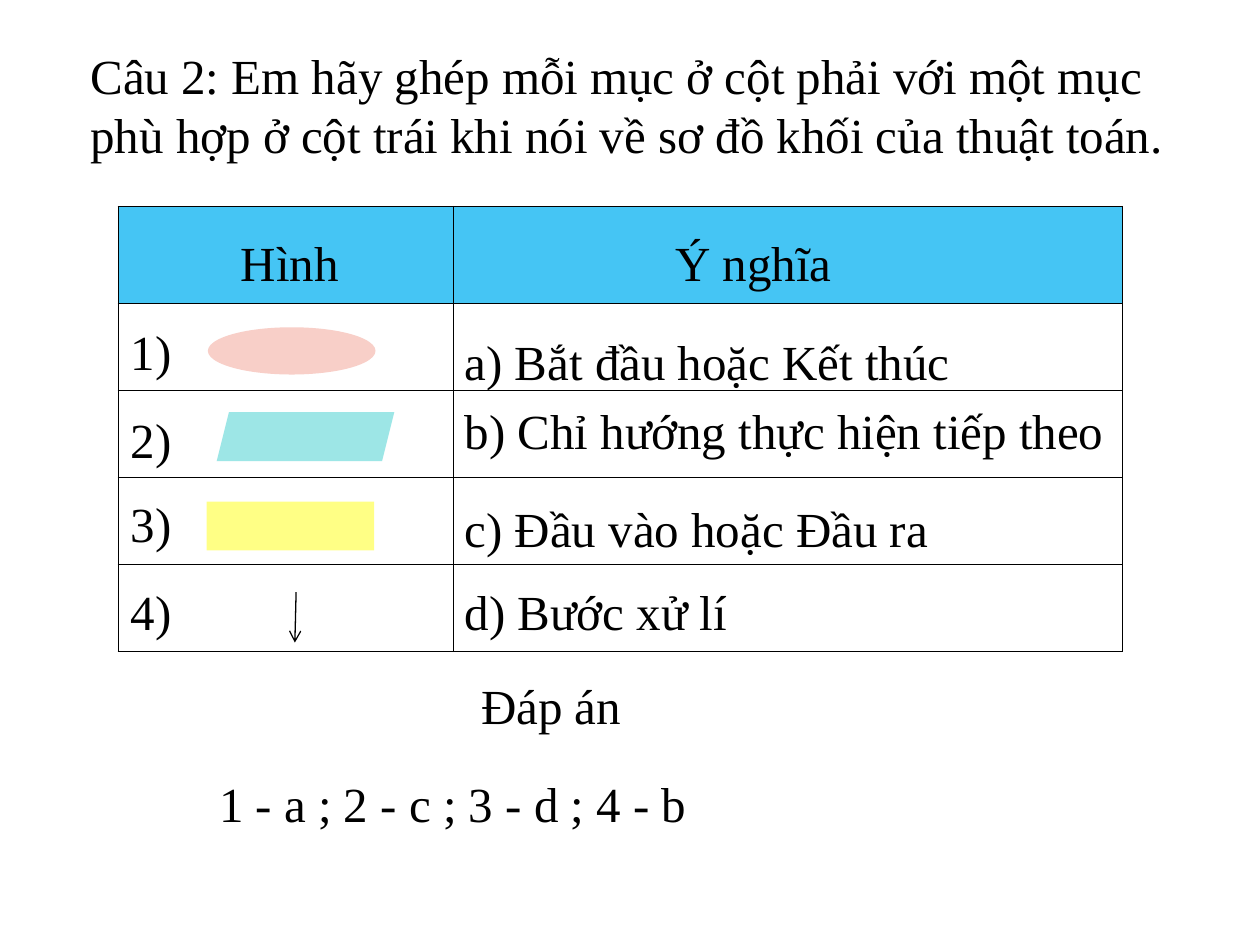
from dataclasses import dataclass

from lxml.etree import SubElement as Sub
from pptx import Presentation
from pptx.dml.color import RGBColor as Rgb
from pptx.enum.shapes import MSO_CONNECTOR as Conn, MSO_SHAPE as Kind
from pptx.enum.text import MSO_AUTO_SIZE as Auto, PP_ALIGN as Align
from pptx.oxml.ns import qn
from pptx.util import Pt


@dataclass(frozen=True)
class Theme:
    font: str = "Times New Roman"
    size: float = 28
    ink: str = "000000"
    head: str = "00B0F0"
    teal: str = "33CCCC"
    yellow: str = "FFFF00"
    pink: str = "F8CFC8"
    border: float = 1
    thin: float = 0.75


@dataclass(frozen=True)
class Label:
    text: str
    left: float
    top: float
    width: float
    height: float = 41
    align: Align = Align.LEFT


@dataclass(frozen=True)
class Symbol:
    kind: Kind
    left: float
    top: float
    width: float
    height: float
    color: str
    alpha: int = 100


THEME = Theme()
LEFT, TOP = 67.7, 118.1
COLS = (191.5, 382.3)
ROWS = (55.4,) + (49.7,) * 4
ANSWER = 258.5  # left edge of the meanings

# Each row: number, top of number, meaning, top of meaning, width
PAIRS = (
    ("1)", 180, "a) Bắt đầu hoặc Kết thúc", 185.8, 360),
    ("2)", 230.4, "b) Chỉ hướng thực hiện tiếp theo", 225.4, 388),
    ("3)", 278.6, "c) Đầu vào hoặc Đầu ra", 281.5, 376.6),
    ("4)", 329, "d) Bước xử lí", 329, 371.5),
)
LABELS = (
    Label("Câu 2: Em hãy ghép mỗi mục ở cột phải với một mục phù hợp "
          "ở cột trái khi nói về sơ đồ khối của thuật toán.",
          44.6, 22.3, 630, 75),
    Label("Hình", 95.8, 129.6, 139.7, align=Align.CENTER),
    Label("Ý nghĩa", 360.7, 129.6, 139.7, align=Align.CENTER),
    Label("Đáp án", 208.1, 382.3, 213.8, align=Align.CENTER),
    Label("1 - a ; 2 - c ; 3 - d ; 4 - b", 118.1, 438.5, 332),
)
SYMBOLS = (
    Symbol(Kind.OVAL, 118.8, 187, 95.8, 27, THEME.pink),
    Symbol(Kind.PARALLELOGRAM, 123.8, 235.6, 101.5, 28, THEME.teal, 48),
    Symbol(Kind.RECTANGLE, 118.1, 286.6, 95.8, 28, THEME.yellow, 48),
)


def apply(target, values: dict) -> None:
    for name, value in values.items():
        setattr(target, name, value)


def paint(fill, root, color: str, alpha: int = 100) -> None:
    """Fill with a solid colour; root is the element that holds the fill."""
    fill.solid()
    fill.fore_color.rgb = Rgb.from_string(color)
    if alpha < 100:
        tone = root.find(qn("a:solidFill")).find(qn("a:srgbClr"))
        Sub(tone, qn("a:alpha"), val=str(alpha * 1000))


def edge(cell) -> None:
    props = cell._tc.get_or_add_tcPr()
    for side in "LRTB":
        line = Sub(props, qn("a:ln" + side), w=str(Pt(THEME.border)))
        Sub(Sub(line, qn("a:solidFill")), qn("a:srgbClr"), val=THEME.ink)


def add_grid(slide) -> None:
    table = slide.shapes.add_table(
        len(ROWS), len(COLS), Pt(LEFT), Pt(TOP),
        Pt(sum(COLS)), Pt(sum(ROWS))).table
    apply(table, {"first_row": False, "horz_banding": False})
    for col, width in zip(table.columns, COLS):
        col.width = Pt(width)
    for num, (row, height) in enumerate(zip(table.rows, ROWS)):
        row.height = Pt(height)
        for cell in row.cells:
            edge(cell)
            if num == 0:
                paint(cell.fill, cell._tc.tcPr, THEME.head, 73)
            else:
                cell.fill.background()


def add_label(slide, item: Label) -> None:
    box = slide.shapes.add_textbox(
        Pt(item.left), Pt(item.top), Pt(item.width), Pt(item.height))
    frame = box.text_frame
    apply(frame, {"word_wrap": True, "auto_size": Auto.SHAPE_TO_FIT_TEXT})
    para = frame.paragraphs[0]
    para.alignment = item.align
    run = para.add_run()
    run.text = item.text
    apply(run.font, {"name": THEME.font, "size": Pt(THEME.size)})
    run.font.color.rgb = Rgb.from_string(THEME.ink)


def add_symbol(slide, item: Symbol) -> None:
    shape = slide.shapes.add_shape(
        item.kind, Pt(item.left), Pt(item.top),
        Pt(item.width), Pt(item.height))
    shape.shadow.inherit = False
    paint(shape.fill, shape._element.spPr, item.color, item.alpha)
    shape.line.fill.background()


def add_arrow(slide, x1: float, y1: float, x2: float, y2: float) -> None:
    arrow = slide.shapes.add_connector(
        Conn.STRAIGHT, Pt(x1), Pt(y1), Pt(x2), Pt(y2))
    arrow.line.width = Pt(THEME.thin)
    arrow.line.color.rgb = Rgb.from_string(THEME.ink)
    props = arrow._element.spPr
    Sub(props.find(qn("a:ln")), qn("a:tailEnd"), type="arrow")
    Sub(props, qn("a:effectLst"))


def main() -> None:
    deck = Presentation()
    apply(deck, {"slide_width": Pt(720), "slide_height": Pt(540)})
    slide = deck.slides.add_slide(deck.slide_layouts[6])

    # Table and flowchart symbols
    add_grid(slide)
    for item in SYMBOLS:
        add_symbol(slide, item)
    add_arrow(slide, 169.2, 338.4, 168.5, 367.2)

    # Question, headings and answer
    for item in LABELS:
        add_label(slide, item)

    # Numbers and meanings
    for num, top, text, drop, width in PAIRS:
        add_label(slide, Label(num, LEFT, top, 44.6))
        add_label(slide, Label(text, ANSWER, drop, width))

    deck.save("out.pptx")


if __name__ == "__main__":
    main()
